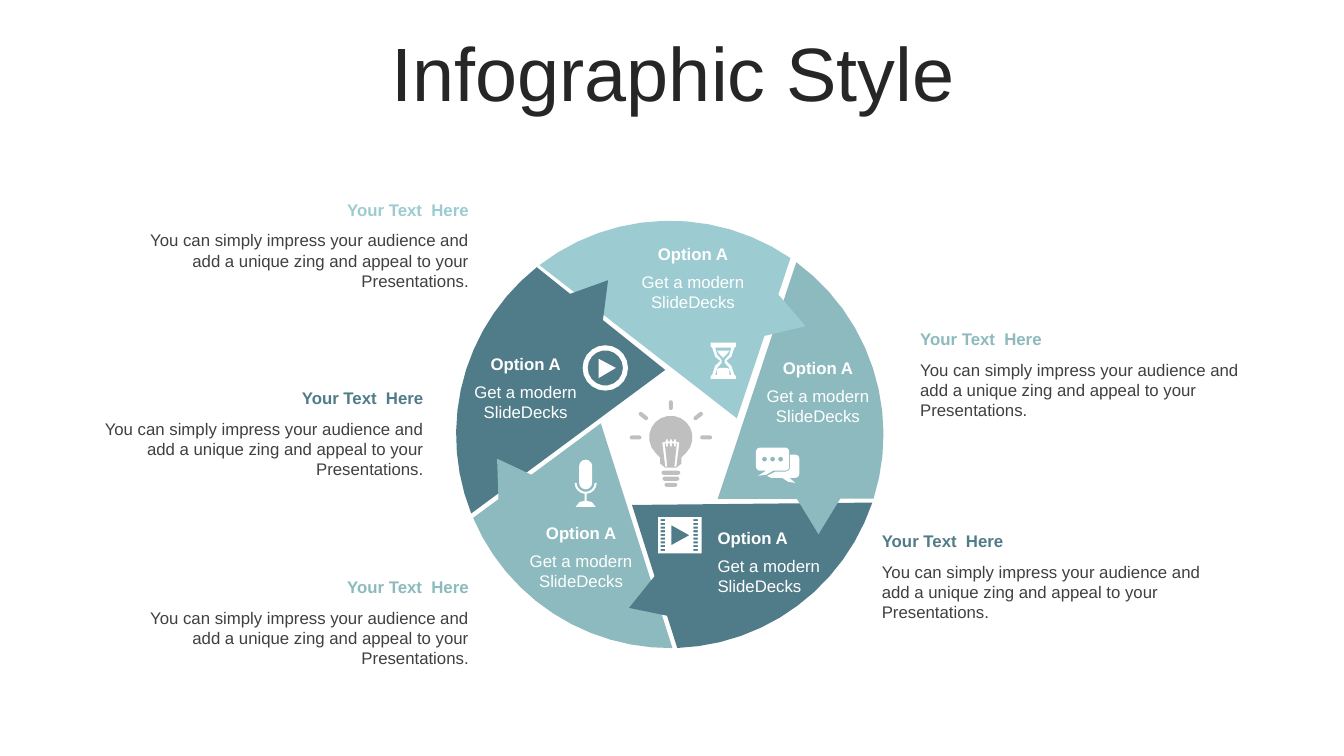
from collections import namedtuple
from dataclasses import dataclass
from math import atan2, ceil, cos, degrees, radians, sin, sqrt

from pptx import Presentation
from pptx.dml.color import RGBColor
from pptx.enum.shapes import MSO_SHAPE as Shape
from pptx.enum.text import MSO_ANCHOR as Anchor, PP_ALIGN as Align
from pptx.util import Inches, Pt

CELL = Inches(0.1)  # side of one square grid cell
COLUMNS, ROWS = 133.33, 75


@dataclass(frozen=True)
class Theme:
    font: str = "Arial"
    title_size: int = 54
    text_size: int = 12
    title: str = "262626"
    body: str = "404040"
    white: str = "FFFFFF"
    grey: str = "BFBFBF"
    light: str = "9CCCD2"
    mid: str = "8CBABE"
    dark: str = "507C89"


def cells(n):
    return round(n * CELL)


def arc(cx, cy, r, start, end):
    """Points on a circle, angles clockwise from the right; wide arcs get finer steps."""
    steps = max(2, ceil(abs(end - start) * sqrt(r) / 28))
    angles = [radians(start + (end - start) * i / steps) for i in range(steps + 1)]
    return [(cx + r * cos(a), cy + r * sin(a)) for a in angles]


def disc(cx, cy, r):
    return arc(cx, cy, r, 0, 360)


def rect(x, y, w, h):
    return [(x, y), (x + w, y), (x + w, y + h), (x, y + h)]


def capsule(x1, y1, x2, y2, r):
    """Straight bar with round ends, centred on the given line."""
    a = degrees(atan2(y2 - y1, x2 - x1))
    return arc(x2, y2, r, a - 90, a + 90) + arc(x1, y1, r, a + 90, a + 270)


def mirror(cx, cy, half):
    """Close a right-hand outline with its reflection in the axis x = cx."""
    return ([(cx + x, cy + y) for x, y in half]
            + [(cx - x, cy + y) for x, y in reversed(half)])


class Deck:
    def __init__(self, theme):
        self.theme = theme
        self.prs = Presentation()
        self.prs.slide_width = cells(COLUMNS)
        self.prs.slide_height = cells(ROWS)
        self.s = self.prs.slides.add_slide(self.prs.slide_layouts[6])

    def paint(self, sp, color):
        sp.shadow.inherit = False
        sp.fill.solid()
        sp.fill.fore_color.rgb = RGBColor.from_string(color)
        sp.line.fill.background()

    def text(self, x, y, w, h, words, color, align=Align.LEFT, bold=False, size=None):
        tf = self.s.shapes.add_textbox(*map(cells, (x, y, w, h))).text_frame
        tf.word_wrap = True
        p = tf.paragraphs[0]
        p.text, p.alignment = words, align
        p.font.name, p.font.bold = self.theme.font, bold
        p.font.size = Pt(size or self.theme.text_size)
        p.font.color.rgb = RGBColor.from_string(color)
        return tf

    def title(self, words):
        tf = self.text(3.5, 3.7, 126.6, 7.9, words, self.theme.title,
                       Align.CENTER, size=self.theme.title_size)
        tf.vertical_anchor = Anchor.MIDDLE
        tf.paragraphs[0].line_spacing = 0.9
        tf.paragraphs[0].space_before = Pt(10)

    def note(self, x, y, w, heading, body, colors, align, drop):
        """Bold heading with a body text `drop` rows below it."""
        self.text(x, y + drop, w, 5, body, colors[1], align)
        self.text(x, y, w, 3, heading, colors[0], align, bold=True)

    def outline(self, contours, color):
        """One freeform; a contour inside another cuts a hole."""
        first, *rest = [[(cells(x), cells(y)) for x, y in c] for c in contours]
        builder = self.s.shapes.build_freeform(*first[0])
        builder.add_line_segments(first[1:])
        for contour in rest:
            builder.move_to(*contour[0])
            builder.add_line_segments(contour[1:])
        self.paint(builder.convert_to_shape(), color)

    def pointer(self, x, y, rotation, color):
        sp = self.s.shapes.add_shape(Shape.FLOWCHART_MERGE,
                                     *map(cells, (x, y, 4.4, 3.6)))
        sp.rotation = rotation
        self.paint(sp, color)


def bulb():
    cx, cy = 66.55, 43.4
    glass = (arc(cx, cy, 2.15, 135, 405)
             + [(67.6, 45.4), (67.6, 46), (67.1, 46.4),
                (66, 46.4), (65.5, 46), (65.5, 45.4)])
    filament = mirror(cx, 44, [
        (0.1, -0.4), (0.1, -0.2), (0.3, -0.2), (0.3, -0.4), (0.5, -0.4),
        (0.5, -0.2), (0.85, -0.1), (0.55, 2.3), (0.35, 2.3), (0.6, 0),
        (0.5, 0), (0.5, 0.3), (0.3, 0.3), (0.3, 0), (0.1, 0), (0.1, 0.3)])
    base = [capsule(cx - half, y, cx + half, y, 0.2)
            for half, y in ((0.75, 46.9), (0.65, 47.5), (0.45, 48.1))]
    rays = []
    for angle, near, far in ((180, 3.1, 3.9), (218, 3.1, 3.8), (270, 2.9, 3.5),
                             (322, 3.1, 3.8), (360, 3.1, 3.9)):
        dx, dy = cos(radians(angle)), sin(radians(angle))
        rays.append(capsule(cx + near * dx, cy + near * dy,
                            cx + far * dx, cy + far * dy, 0.2))
    return [glass, filament, *base, *rays]


def chat():
    front = (arc(75.4, 44.8, 0.4, 180, 270) + arc(77.9, 44.8, 0.4, 270, 360)
             + arc(77.9, 46.3, 0.4, 0, 90) + [(76.7, 46.7), (76, 47.1), (75.2, 47.2),
                                              (76, 46.7)]
             + arc(75.4, 46.3, 0.4, 90, 180))
    back = ([(78.4, 45.1)] + arc(78.9, 45.5, 0.4, 270, 360) + arc(78.9, 47, 0.4, 0, 90)
            + [(78.3, 47.4), (78.9, 47.9), (78.2, 47.8), (77.6, 47.4), (76.5, 47.4),
               (76.1, 47.2), (76.9, 46.8)] + arc(77.9, 46.3, 0.5, 90, 0))
    return [front, back] + [disc(75.85 + 0.8 * i, 45.55, 0.25) for i in range(3)]


def hourglass():
    halves = [
        [(1.25, -1.8), (1.25, -1.4), (1.1, -1.3), (0.8, -0.4), (0.3, 0),
         (0.8, 0.5), (1.1, 1.4), (1.25, 1.5), (1.25, 1.8)],
        [(0.8, -1.3), (0.6, -0.6), (0.15, -0.1), (0.15, 0.2), (0.6, 0.7), (0.8, 1.4)],
        [(0.6, -1), (0.45, -0.75), (0, -0.3)],
        [(0.3, 0.7), (0.6, 0.8), (0.6, 1.4)],
    ]
    return [mirror(71.75, 35.8, half) for half in halves]


def play():
    return [disc(60.05, 36.5, 2.25), disc(60.05, 36.5, 1.75),
            [(59.4, 35.6), (61.1, 36.5), (59.4, 37.5)]]


def film():
    holes = [rect(x, 51.5 + 0.37 * i, 0.45, 0.2) for x in (65.55, 68.8) for i in range(9)]
    return [rect(65.3, 51.3, 4.3, 3.6), [(66.6, 52.1), (68.4, 53.1), (66.6, 54.1)], *holes]


def microphone():
    cx, cy = 58.1, 47.9
    stand = (arc(cx, cy, 1.1, 0, 85) + [(58.2, 49.7), (58.7, 49.8), (59.1, 50.3),
                                        (57.1, 50.3), (57.5, 49.8), (58, 49.7)]
             + arc(cx, cy, 1.1, 95, 180) + arc(cx, cy, 0.9, 180, 0))
    return [stand, capsule(cx, 46.25, cx, cy, 0.65)]


Option = namedtuple("Option", "color start end tip label align pointer")
Callout = namedtuple("Callout", "x y w color align")


def main():
    t = Theme()
    deck = Deck(t)
    deck.title("Infographic Style")

    for c in (Callout(90.3, 32.1, 35.9, t.mid, Align.LEFT),
              Callout(13.5, 19.3, 34, t.light, Align.RIGHT),
              Callout(9, 38, 34, t.dark, Align.RIGHT),
              Callout(13.5, 56.7, 34, t.mid, Align.RIGHT),
              Callout(86.5, 52.2, 34, t.dark, Align.LEFT)):
        deck.note(c.x, c.y, c.w, "Your Text  Here",
                  "You can simply impress your audience and add a unique zing "
                  "and appeal to your Presentations.", (c.color, t.body), c.align, 3.05)

    mid = Align.CENTER
    options = (
        Option(t.light, 232.4, 304.4, (73.1, 41.5), (61.4, 23.7), mid, (76, 30, 288)),
        Option(t.mid, 306.3, 377.5, (71.2, 49.5), (73.8, 35), mid, (79, 49.4, 0)),
        Option(t.dark, 18.6, 88, (62.7, 50.1), (70.2, 51.9), Align.LEFT, (61.9, 57.9, 70.2)),
        Option(t.mid, 89.3, 157, (59.6, 42), (50.3, 51.4), mid, (48.1, 45.2, 146.5)),
        Option(t.dark, 158.3, 231.5, (66, 36.7), (44.8, 34.6), mid, (57, 27.4, 218.8)),
    )
    for o in options:
        deck.outline([[o.tip] + arc(66.45, 43.1, 21.2, o.start, o.end)], o.color)
    for o in options:
        deck.note(*o.label, 14.7, "Option A", "Get a modern SlideDecks",
                  (t.white, t.white), o.align, 2.75)
    for o in options:
        deck.pointer(*o.pointer, o.color)

    deck.outline(bulb(), t.grey)
    for icon in (chat, hourglass, play, film, microphone):
        deck.outline(icon(), t.white)
    deck.prs.save("out.pptx")


if __name__ == "__main__":
    main()
